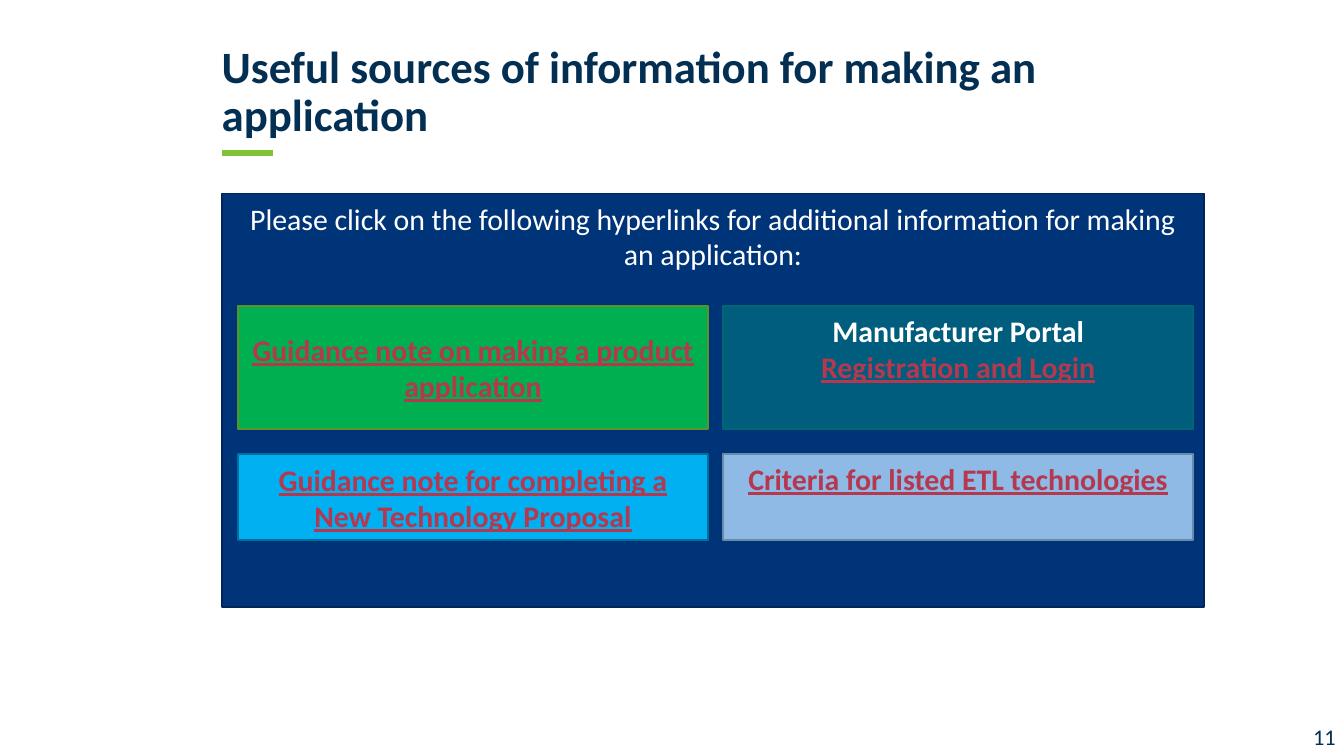
from dataclasses import dataclass
from typing import Optional

from lxml.etree import SubElement
from pptx import Presentation
from pptx.dml.color import RGBColor
from pptx.enum.shapes import MSO_CONNECTOR, MSO_SHAPE
from pptx.enum.text import MSO_ANCHOR, PP_ALIGN
from pptx.oxml.ns import qn
from pptx.util import Inches, Pt


@dataclass(frozen=True)
class Theme:
    font: str = "Calibri"
    ink: str = "032F52"
    number: str = "032F51"
    accent: str = "80C337"
    panel: str = "003478"
    panel_edge: str = "002659"
    white: str = "FFFFFF"
    link: str = "B5384F"
    title_size: int = 24
    body_size: int = 16
    number_size: int = 12


@dataclass(frozen=True)
class Box:
    left: float
    top: float
    width: float
    height: float

    def emu(self) -> list[int]:
        return [Inches(v) for v in (self.left, self.top, self.width, self.height)]


@dataclass(frozen=True)
class Line:
    text: str
    color: str
    size: int
    bold: bool = False
    underline: Optional[bool] = None


@dataclass(frozen=True)
class Card:
    col: int
    row: int
    fill: str
    edge: str
    link: str
    heading: str = ""
    anchor: MSO_ANCHOR = MSO_ANCHOR.MIDDLE


THEME = Theme()
MARGIN = 1.65
GRID_LEFT, GRID_WIDTH, COL_GAP = 1.77, 7.11, 0.11
COL_WIDTH = (GRID_WIDTH - COL_GAP) / 2
ROWS = ((2.28, 0.91), (3.38, 0.64))

CARDS = (
    Card(0, 0, "00B050", "5F9029", "Guidance note on making a product application"),
    Card(1, 1, "8EBAE5", "698AA9", "Criteria for listed ETL technologies",
         anchor=MSO_ANCHOR.TOP),
    Card(0, 1, "00B0F0", "006F9F",
         "Guidance note for completing a New Technology Proposal"),
    Card(1, 0, "005D7E", "00676E", "Registration and Login",
         "Manufacturer Portal", MSO_ANCHOR.TOP),
)


def rgb(color: str) -> RGBColor:
    return RGBColor.from_string(color)


def write(tf, lines: list[Line], align: PP_ALIGN, anchor: MSO_ANCHOR) -> None:
    tf.word_wrap = True
    tf.vertical_anchor = anchor
    for i, line in enumerate(lines):
        p = tf.paragraphs[0] if i == 0 else tf.add_paragraph()
        p.alignment = align
        p.add_run().text = line.text
        p.font.name = THEME.font
        p.font.size = Pt(line.size)
        p.font.bold = line.bold
        p.font.underline = line.underline
        p.font.color.rgb = rgb(line.color)


def add_text(s, box: Box, line: Line, align: PP_ALIGN, anchor: MSO_ANCHOR):
    tf = s.shapes.add_textbox(*box.emu()).text_frame
    tf.margin_left = tf.margin_right = tf.margin_top = tf.margin_bottom = 0
    write(tf, [line], align, anchor)
    return tf


def add_panel(s, box: Box, fill: str, edge: str, lines: list[Line],
              anchor: MSO_ANCHOR) -> None:
    sp = s.shapes.add_shape(MSO_SHAPE.RECTANGLE, *box.emu())
    sp.shadow.inherit = False
    sp.fill.solid()
    sp.fill.fore_color.rgb = rgb(fill)
    sp.line.color.rgb = rgb(edge)
    sp.line.width = Pt(1)
    write(sp.text_frame, lines, PP_ALIGN.CENTER, anchor)


def add_card(s, card: Card) -> None:
    top, height = ROWS[card.row]
    left = GRID_LEFT + card.col * (COL_WIDTH + COL_GAP)
    lines = [Line(card.link, THEME.link, THEME.body_size, True, True)]
    if card.heading:
        lines.insert(0, Line(card.heading, THEME.white, THEME.body_size, True))
    add_panel(s, Box(left, top, COL_WIDTH, height), card.fill, card.edge,
              lines, card.anchor)


def add_rule(s, left: float, top: float, width: float) -> None:
    rule = s.shapes.add_connector(MSO_CONNECTOR.STRAIGHT, Inches(left), Inches(top),
                                  Inches(left + width), Inches(top))
    rule.line.color.rgb = rgb(THEME.accent)
    rule.line.width = Pt(3)
    SubElement(rule._element.spPr, qn("a:effectLst"))


def main() -> None:
    prs = Presentation()
    prs.slide_width = Inches(10)
    prs.slide_height = prs.slide_width * 9 // 16
    s = prs.slides.add_slide(prs.slide_layouts[6])

    add_rule(s, MARGIN, 1.14, 0.38)
    add_text(s, Box(9.71, 5.33, 0.29, 0.3),
             Line("11", THEME.number, THEME.number_size),
             PP_ALIGN.CENTER, MSO_ANCHOR.MIDDLE)
    title = Line("Useful sources of information for making an application",
                 THEME.ink, THEME.title_size, True)
    tf = add_text(s, Box(MARGIN, 0.35, 7.14, 0.7), title,
                  PP_ALIGN.LEFT, MSO_ANCHOR.BOTTOM)
    tf.paragraphs[0].line_spacing = 0.9

    intro = Line("Please click on the following hyperlinks for additional "
                 "information for making an application:",
                 THEME.white, THEME.body_size)
    add_panel(s, Box(MARGIN, 1.44, 7.31, 3.08), THEME.panel, THEME.panel_edge,
              [intro], MSO_ANCHOR.TOP)
    for card in CARDS:
        add_card(s, card)

    prs.save("out.pptx")


if __name__ == "__main__":
    main()
